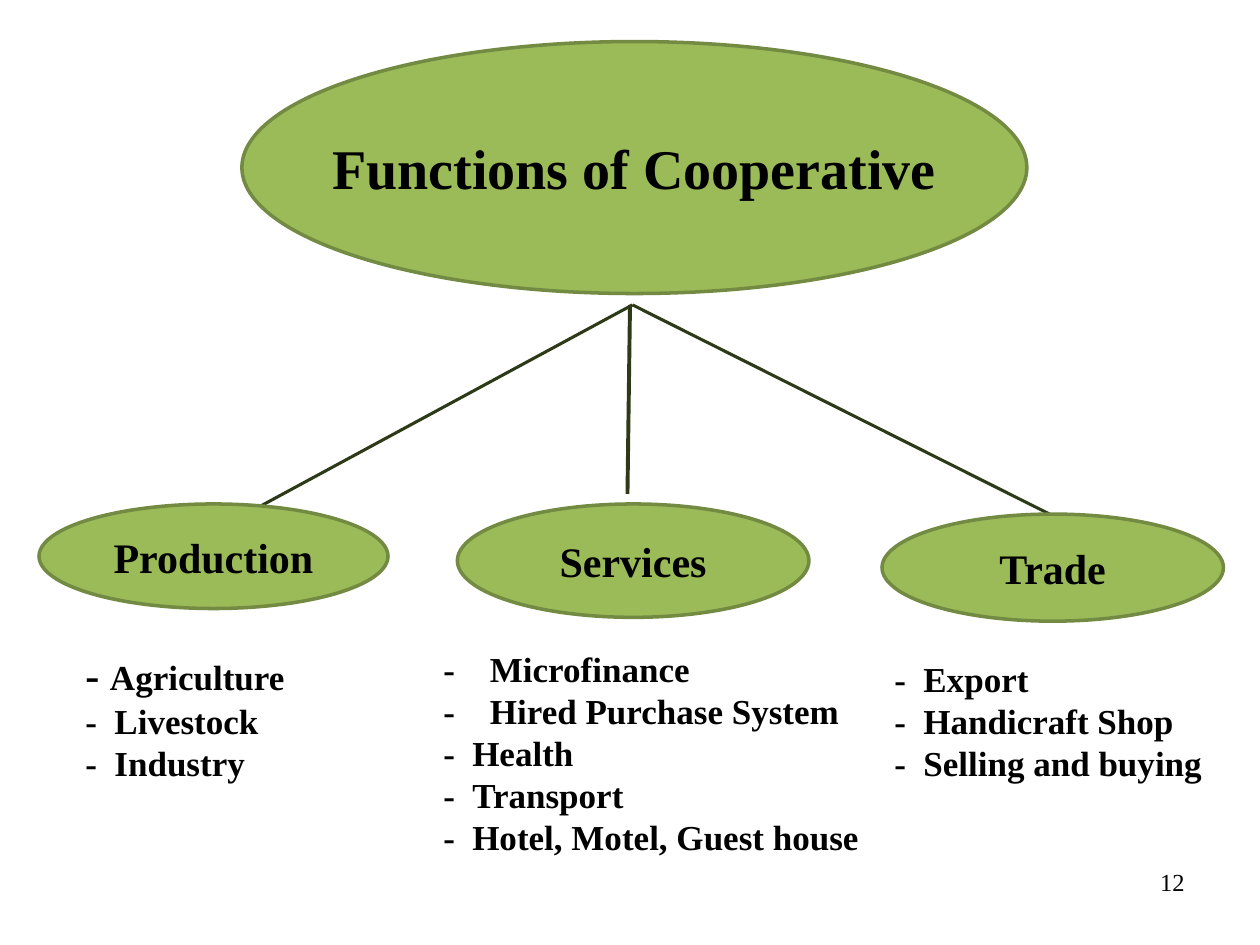
"""Build the slide on the functions of a cooperative."""
from dataclasses import dataclass

from lxml import etree
from pptx import Presentation, util as u
from pptx.dml.color import RGBColor
from pptx.enum import shapes, text
from pptx.oxml.ns import qn

COLORS = {"fill": "9BBB59", "outline": "738A42", "branch": "2E3917", "text": "000000"}
FONT = "Times New Roman"
LEFT, CENTER, RIGHT = text.PP_ALIGN.LEFT, text.PP_ALIGN.CENTER, text.PP_ALIGN.RIGHT


@dataclass(frozen=True)
class Box:
    left: float
    top: float
    width: float
    height: float

    def lengths(self) -> list:
        return [u.Inches(n) for n in (self.left, self.top, self.width, self.height)]


@dataclass(frozen=True)
class Item:
    label: str
    indent: float = 0.23


@dataclass(frozen=True)
class Function:
    name: str
    oval: Box
    listing: Box
    items: tuple


@dataclass(frozen=True)
class Branch:
    start: tuple
    end: tuple
    weight: float


HEADING = Box(1.92, 0.33, 6.23, 2)
FUNCTIONS = (
    Function("Production", Box(0.31, 4, 2.77, 0.83), Box(0.58, 5.1, 2.25, 1.18),
             (Item("Agriculture", 0), Item("Livestock"), Item("Industry"))),
    Function("Services", Box(3.63, 4, 2.79, 0.9), Box(3.42, 5.09, 3.83, 1.78),
             (Item("Microfinance", 0.37), Item("Hired Purchase System", 0.37),
              Item("Health"), Item("Transport"), Item("Hotel, Motel, Guest house"))),
    Function("Trade", Box(7, 4.08, 2.71, 0.85), Box(7, 5.17, 3.58, 1.45),
             (Item("Export"), Item("Handicraft Shop"), Item("Selling and buying"))),
)
BRANCHES = (
    Branch((2.08, 4.01), (5.02, 2.42), 1.75),
    Branch((8.33, 4.08), (5.02, 2.42), 1.75),
    Branch((5, 2.42), (4.98, 3.92), 2.25),
)


def color(name: str) -> RGBColor:
    return RGBColor.from_string(COLORS[name])


def add_run(paragraph, words: str, size: float, bold: bool = True) -> None:
    run = paragraph.add_run()
    run.text = words
    run.font.name, run.font.size, run.font.bold = FONT, u.Pt(size), bold
    run.font.color.rgb = color("text")


def write_label(frame, words: str, size: float) -> None:
    frame.word_wrap = False
    frame.vertical_anchor = text.MSO_ANCHOR.MIDDLE
    frame.paragraphs[0].alignment = CENTER
    add_run(frame.paragraphs[0], words, size)


def add_oval(slide, box: Box):
    oval = slide.shapes.add_shape(shapes.MSO_SHAPE.OVAL, *box.lengths())
    oval.shadow.inherit = False
    oval.fill.solid()
    oval.fill.fore_color.rgb = color("fill")
    oval.line.color.rgb = color("outline")
    oval.line.width = u.Pt(2)
    return oval


def add_heading(slide) -> None:
    oval = add_oval(slide, HEADING)
    title = slide.shapes.title
    title.left, title.top, title.width, title.height = HEADING.lengths()
    write_label(title.text_frame, "Functions of Cooperative", 32)
    oval.element.addnext(title.element)


def add_branch(slide, branch: Branch) -> None:
    ends = [u.Inches(n) for n in branch.start + branch.end]
    line = slide.shapes.add_connector(shapes.MSO_CONNECTOR.STRAIGHT, *ends)
    line.line.color.rgb = color("branch")
    line.line.width = u.Pt(branch.weight)
    etree.SubElement(line.element.spPr, qn("a:effectLst"))


def add_item(paragraph, item: Item) -> None:
    paragraph.alignment = LEFT
    if item.indent:
        indent = u.Inches(item.indent)
        properties = paragraph._p.get_or_add_pPr()
        properties.set("marL", str(indent))
        properties.set("indent", str(-indent))
        add_run(paragraph, f"-\t{item.label}", 20)
    else:
        add_run(paragraph, "- ", 24)
        add_run(paragraph, item.label, 20)


def add_function(slide, function: Function) -> None:
    write_label(add_oval(slide, function.oval).text_frame, function.name, 24)
    frame = slide.shapes.add_textbox(*function.listing.lengths()).text_frame
    frame.word_wrap = True
    for number, item in enumerate(function.items):
        add_item(frame.add_paragraph() if number else frame.paragraphs[0], item)


def add_page_number(slide) -> None:
    frame = slide.shapes.add_textbox(*Box(7.17, 6.83, 2.33, 0.52).lengths()).text_frame
    frame.word_wrap = True
    frame.paragraphs[0].alignment = RIGHT
    add_run(frame.paragraphs[0], "12", 14, bold=False)


def main() -> None:
    deck = Presentation()
    deck.slide_width, deck.slide_height = u.Inches(10), u.Inches(7.5)
    slide = deck.slides.add_slide(deck.slide_layouts.get_by_name("Title Only"))
    add_heading(slide)
    add_page_number(slide)
    for branch in BRANCHES:
        add_branch(slide, branch)
    for function in FUNCTIONS:
        add_function(slide, function)
    deck.save("out.pptx")


if __name__ == "__main__":
    main()
